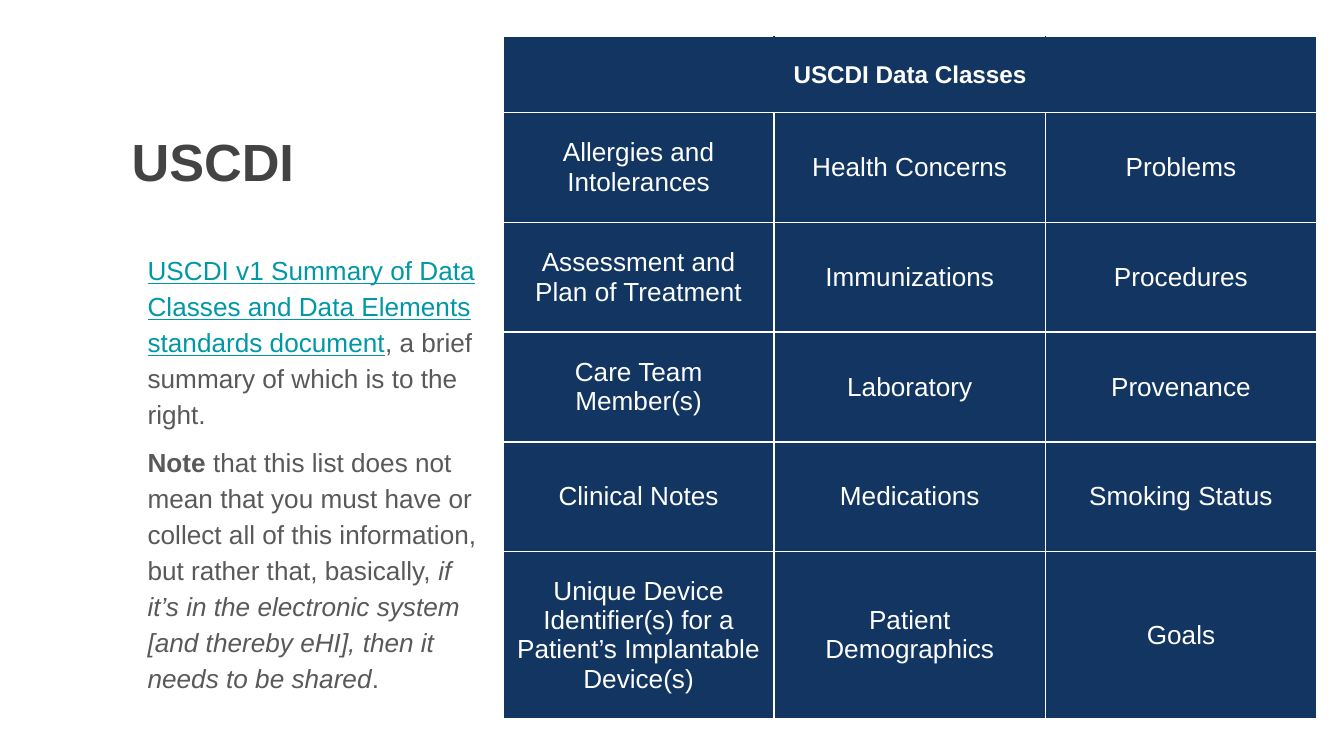
from dataclasses import dataclass

from lxml import etree
from pptx import Presentation
from pptx.dml.color import RGBColor
from pptx.enum.text import MSO_ANCHOR, PP_ALIGN
from pptx.oxml.ns import qn
from pptx.util import Pt

MIDDLE = MSO_ANCHOR.MIDDLE
CENTER = PP_ALIGN.CENTER


@dataclass(frozen=True)
class Theme:
    font: str = "Arial"
    title: str = "434343"
    body: str = "595959"
    link: str = "0097A7"
    navy: str = "123661"
    white: str = "FFFFFF"
    title_size: float = 28
    head_size: float = 13
    text_size: float = 14


@dataclass(frozen=True)
class Span:
    text: str
    color: str
    size: float
    bold: bool = False
    italic: bool = False
    under: bool = False


@dataclass(frozen=True)
class Box:
    left: float
    top: float
    width: float
    height: float


THEME = Theme()
INSET = 7.2
INDENT = 8.6

TITLE_BOX = Box(63.4, 58.3, 671, 45.4)
BODY_BOX = Box(63.4, 126.7, 205.9, 233.3)
GRID_BOX = Box(269.5, 19.6, 435.9, 365.5)
ROWS = [40.8] + [58.8] * 4 + [89.5]

TITLE = [[Span("USCDI", THEME.title, THEME.title_size, bold=True)]]


def prose(text: str, **style: bool) -> Span:
    return Span(text, THEME.body, THEME.text_size, **style)


BODY = [
    [
        Span("USCDI v1 Summary of Data Classes and Data Elements standards document",
             THEME.link, THEME.text_size, under=True),
        prose(", a brief summary of which is to the right."),
    ],
    [
        prose("Note ", bold=True),
        prose("that this list does not mean that you must have or collect all of "
              "this information, but rather that, basically, "),
        prose("if it’s in the electronic system [and thereby eHI], "
              "then it needs to be shared", italic=True),
        prose("."),
    ],
]

CLASSES = [
    ["", "USCDI Data Classes", ""],
    ["Allergies and Intolerances", "Health Concerns", "Problems"],
    ["Assessment and Plan of Treatment", "Immunizations", "Procedures"],
    ["Care Team Member(s)", "Laboratory", "Provenance"],
    ["Clinical Notes", "Medications", "Smoking Status"],
    ["Unique Device Identifier(s) for a Patient’s Implantable Device(s)",
     "Patient Demographics", "Goals"],
]


def add_span(para, span: Span) -> None:
    run = para.add_run()
    run.text = span.text
    font = run.font
    font.name = THEME.font
    font.size = Pt(span.size)
    font.bold = span.bold
    font.italic = span.italic
    font.underline = span.under
    font.color.rgb = RGBColor.from_string(span.color)


def add_text(slide, box: Box, paras: list[list[Span]], indent: float = 0,
             lead: float = 1, gap: float = 0, drop: float = 0) -> None:
    shape = slide.shapes.add_textbox(
        Pt(box.left), Pt(box.top), Pt(box.width), Pt(box.height))
    frame = shape.text_frame
    frame.word_wrap = True
    frame.margin_left = frame.margin_right = frame.margin_bottom = Pt(INSET)
    frame.margin_top = Pt(INSET + drop)
    for i, spans in enumerate(paras):
        para = frame.add_paragraph() if i else frame.paragraphs[0]
        para.line_spacing = lead
        if i:
            para.space_before = Pt(gap)
        para._p.get_or_add_pPr().set("marL", str(Pt(indent)))
        for span in spans:
            add_span(para, span)


def set_edge(cell, side: str, color: str) -> None:
    props = cell._tc.get_or_add_tcPr()
    line = etree.SubElement(props, qn(f"a:ln{side}"), w=str(Pt(1)))
    fill = etree.SubElement(line, qn("a:solidFill"))
    etree.SubElement(fill, qn("a:srgbClr"), val=color)


def add_grid(slide, box: Box, rows: list[float], data: list[list[str]]) -> None:
    count = len(data[0])
    table = slide.shapes.add_table(
        len(data), count, Pt(box.left), Pt(box.top),
        Pt(box.width), Pt(box.height)).table
    table.first_row = False
    table.horz_banding = False
    for col in table.columns:
        col.width = Pt(box.width / count)
    for r, (height, names) in enumerate(zip(rows, data)):
        table.rows[r].height = Pt(height)
        head = r == 0
        size = THEME.head_size if head else THEME.text_size
        for c, name in enumerate(names):
            cell = table.cell(r, c)
            # Inner edges of the header blend in, so it reads as one band
            inner = {"L": head and c > 0, "R": head and c < count - 1}
            for side in "LRTB":
                set_edge(cell, side, THEME.navy if inner.get(side) else THEME.white)
            cell.fill.solid()
            cell.fill.fore_color.rgb = RGBColor.from_string(THEME.navy)
            cell.vertical_anchor = MIDDLE
            if name:
                para = cell.text_frame.paragraphs[0]
                para.alignment = CENTER
                add_span(para, Span(name, THEME.white, size, bold=head))


def main() -> None:
    deck = Presentation()
    deck.slide_width, deck.slide_height = Pt(720), Pt(405)
    slide = deck.slides.add_slide(deck.slide_layouts[6])

    # Title and explanation on the left
    add_text(slide, TITLE_BOX, TITLE, drop=4)
    add_text(slide, BODY_BOX, BODY, indent=INDENT, lead=1.15, gap=6)

    # Data classes on the right
    add_grid(slide, GRID_BOX, ROWS, CLASSES)

    deck.save("out.pptx")


if __name__ == "__main__":
    main()
